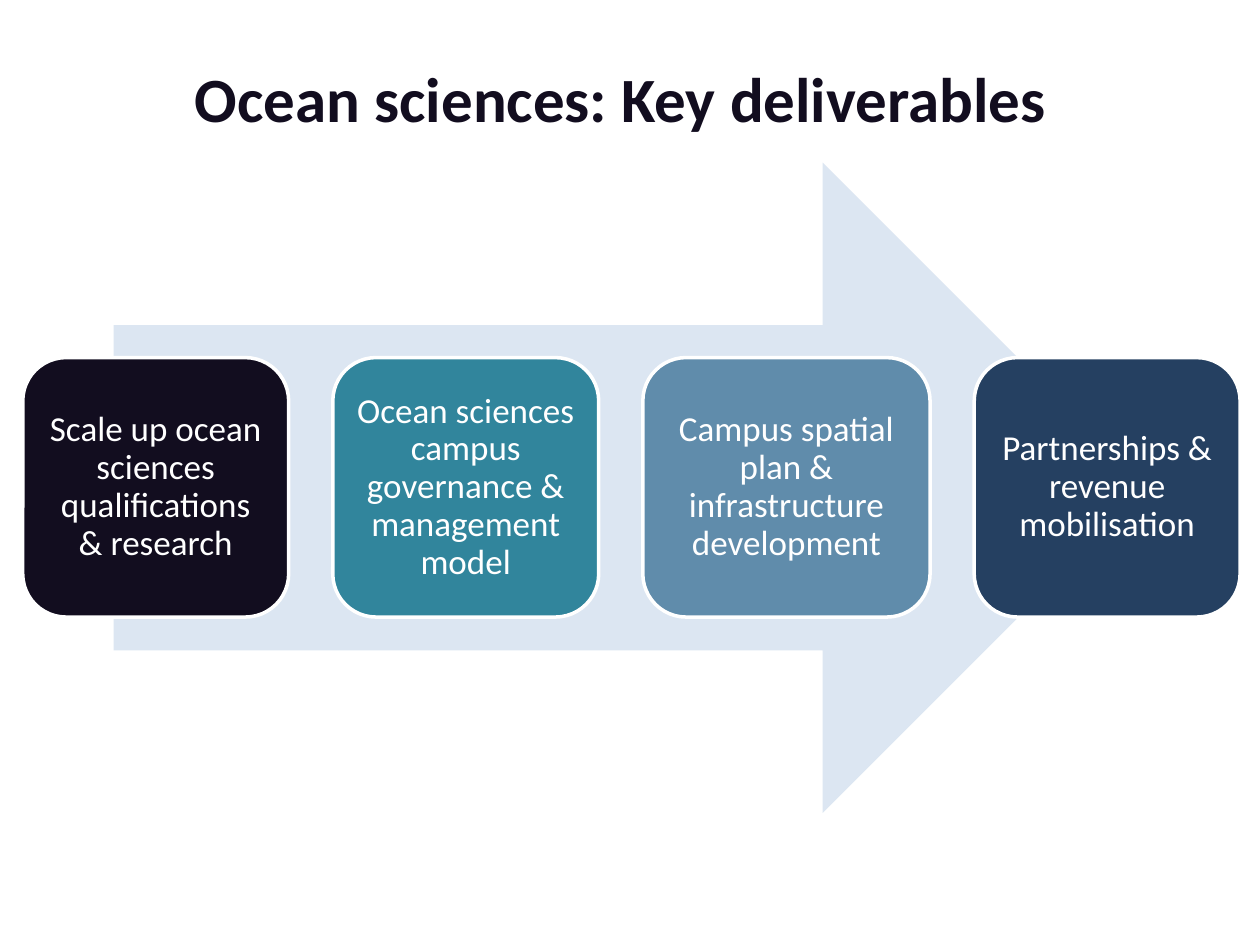
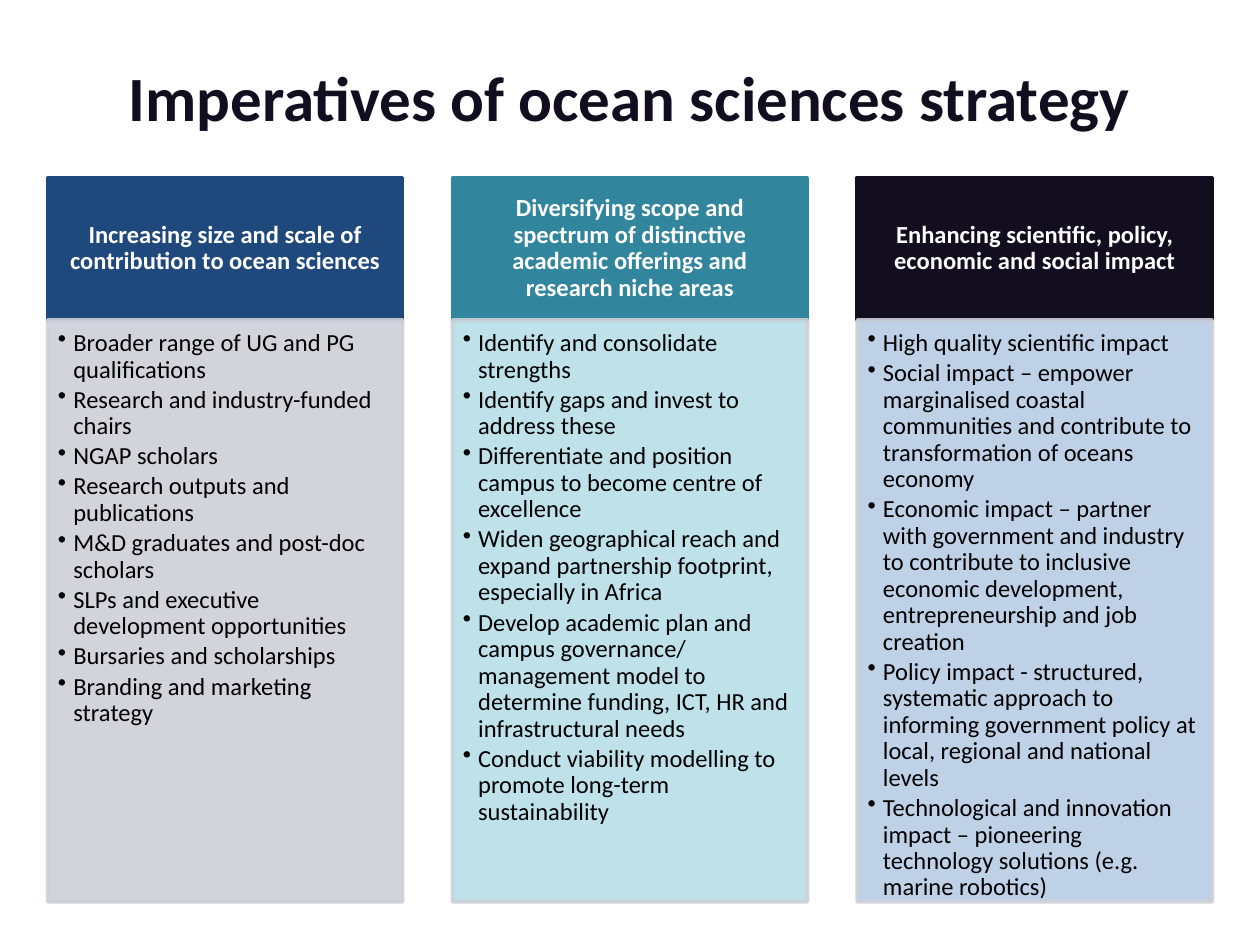
from itertools import accumulate

from lxml.etree import SubElement
from pptx import Presentation
from pptx.dml.color import RGBColor
from pptx.enum.shapes import MSO_SHAPE as Preset
from pptx.enum.text import MSO_ANCHOR as Anchor, MSO_AUTO_SIZE as AutoSize, PP_ALIGN as Align
from pptx.oxml.ns import qn
from pptx.util import Cm, Pt

FONT = "Calibri"
INK, TEAL, WHITE, BLACK = "120D1F", "31859C", "FFFFFF", "000000"
PALE_ARROW, STEEL, NAVY, BLUE, GREY = "DCE6F2", "608CAB", "254061", "1F497D", "CDD0D7"

DELIVERABLES = [
    ("Scale up ocean sciences qualifications & research", INK, 5.36),
    ("Ocean sciences campus governance & management model", TEAL, 5.36),
    ("Campus spatial plan & infrastructure development", STEEL, 5.79),
    ("Partnerships & revenue mobilisation", NAVY, 5.36),
]

IMPERATIVES = [
    ("Increasing size and scale of contribution to ocean sciences", BLUE, GREY, [
        "Broader range of UG and PG qualifications",
        "Research and industry-funded chairs",
        "NGAP scholars",
        "Research outputs and publications",
        "M&D graduates and post-doc scholars",
        "SLPs and executive development opportunities",
        "Bursaries and scholarships",
        "Branding and marketing strategy",
    ]),
    ("Diversifying scope and spectrum of distinctive academic offerings and research niche areas",
     TEAL, "B7DEE8", [
        "Identify and consolidate strengths",
        "Identify gaps and invest to address these",
        "Differentiate and position campus to become centre of excellence",
        "Widen geographical reach and expand partnership footprint, especially in Africa",
        "Develop academic plan and campus governance/ management model to determine funding, "
        "ICT, HR and infrastructural needs",
        "Conduct viability modelling to promote long-term sustainability",
     ]),
    ("Enhancing scientific, policy, economic and social impact", INK, "B9CDE5", [
        "High quality scientific impact",
        "Social impact – empower marginalised coastal communities and contribute to "
        "transformation of oceans economy",
        "Economic impact – partner with government and industry to contribute to inclusive "
        "economic development, entrepreneurship and job creation",
        "Policy impact - structured, systematic approach to informing government policy at "
        "local, regional and national levels",
        "Technological and innovation impact – pioneering technology solutions "
        "(e.g. marine robotics)",
    ]),
]


def paint(color_format, color, alpha=100):
    """Apply a hex colour, with an opacity in percent, to a fill or line fill."""
    color_format.solid()
    color_format.fore_color.rgb = RGBColor.from_string(color)
    if alpha < 100:
        for element in color_format._xPr.iter(qn("a:srgbClr")):
            if element.getparent().getparent() is color_format._xPr:
                SubElement(element, qn("a:alpha"), val=str(alpha * 1000))


def style_font(paragraph, size, color, bold=False):
    """Set the font of a whole paragraph."""
    font = paragraph.font
    font.name, font.size, font.bold = FONT, Pt(size), bold
    font.color.rgb = RGBColor.from_string(color)


def add_block(slide, preset, box, fill, line=None, alpha=100):
    """Add a flat preset shape at a box given in centimetres."""
    shape = slide.shapes.add_shape(preset, *map(Cm, box))
    shape.shadow.inherit = False
    paint(shape.fill, fill, alpha)
    if line:
        paint(shape.line.fill, line, alpha)
        shape.line.width = Pt(2)
    else:
        shape.line.fill.background()
    return shape


def write(shape, texts, size, color, margins, bold=False, bullets=False):
    """Fill a shape with centred text or with a top-anchored bullet list."""
    frame = shape.text_frame
    frame.word_wrap = True
    frame.vertical_anchor = Anchor.TOP if bullets else Anchor.MIDDLE
    frame.margin_left, frame.margin_top, frame.margin_right, frame.margin_bottom = map(Cm, margins)
    for index, text in enumerate(texts):
        paragraph = frame.add_paragraph() if index else frame.paragraphs[0]
        paragraph.text = text
        paragraph.alignment = Align.LEFT if bullets else Align.CENTER
        paragraph.line_spacing = 0.9
        if bullets:
            paragraph.space_after = Pt(2.1)
            properties = paragraph._p.get_or_add_pPr()
            properties.set("marL", str(Cm(0.31)))
            properties.set("indent", str(-Cm(0.31)))
            SubElement(properties, qn("a:buChar"), char="•")
        style_font(paragraph, size, color, bold)


def add_titled_slide(presentation, text, box):
    """Add a title-only slide and format its title."""
    slide = presentation.slides.add_slide(presentation.slide_layouts[5])
    title = slide.shapes.title
    title.left, title.top, title.width, title.height = map(Cm, box)
    title.text_frame.text = text
    title.text_frame.word_wrap = True
    title.text_frame.auto_size = AutoSize.NONE
    paragraph = title.text_frame.paragraphs[0]
    paragraph.alignment = Align.CENTER
    style_font(paragraph, 36, INK, bold=True)
    return slide


def add_deliverables(slide, left, top, height, gap):
    """Place the row of rounded deliverable cards."""
    lefts = accumulate((width + gap for _, _, width in DELIVERABLES), initial=left)
    for x, (text, color, width) in zip(lefts, DELIVERABLES):
        card = add_block(slide, Preset.ROUNDED_RECTANGLE, (x, top, width, height), color, WHITE)
        write(card, [text], 20, WHITE, [0.2] * 4)


def add_imperative(slide, box, imperative):
    """Place one column: a coloured heading above a bullet list."""
    left, top, width, height = box
    heading, color, tint, points = imperative
    heading_height = 2.87
    header = add_block(slide, Preset.RECTANGLE, (left, top, width, heading_height), color, color)
    write(header, [heading], 14, WHITE, (0.28, 0.16, 0.28, 0.16), bold=True)
    body_box = (left, top + heading_height, width, height - heading_height)
    body = add_block(slide, Preset.RECTANGLE, body_box, tint, GREY, alpha=90)
    write(body, points, 14, BLACK, (0.21, 0.21, 0.28, 0.31), bullets=True)


def build_deliverables_slide(presentation):
    """Build the slide with the arrow of deliverables."""
    slide = add_titled_slide(presentation, "Ocean sciences: Key deliverables",
                             (1.32, 1.07, 22.38, 1.8))
    add_block(slide, Preset.RIGHT_ARROW, (2.29, 3.28, 20.85, 13.11), PALE_ARROW)
    add_deliverables(slide, left=0.46, top=7.21, height=5.23, gap=0.89)


def build_imperatives_slide(presentation):
    """Build the slide with the three columns of imperatives."""
    slide = add_titled_slide(presentation, "Imperatives of ocean sciences strategy",
                             (0.94, 1.04, 23.5, 1.8))
    for index, imperative in enumerate(IMPERATIVES):
        add_imperative(slide, (0.96 + index * 8.16, 3.58, 7.16, 14.6), imperative)


def main():
    """Create and save the presentation."""
    presentation = Presentation()
    presentation.slide_width, presentation.slide_height = Cm(25.4), Cm(19.05)
    build_deliverables_slide(presentation)
    build_imperatives_slide(presentation)
    presentation.save("out.pptx")


if __name__ == "__main__":
    main()
